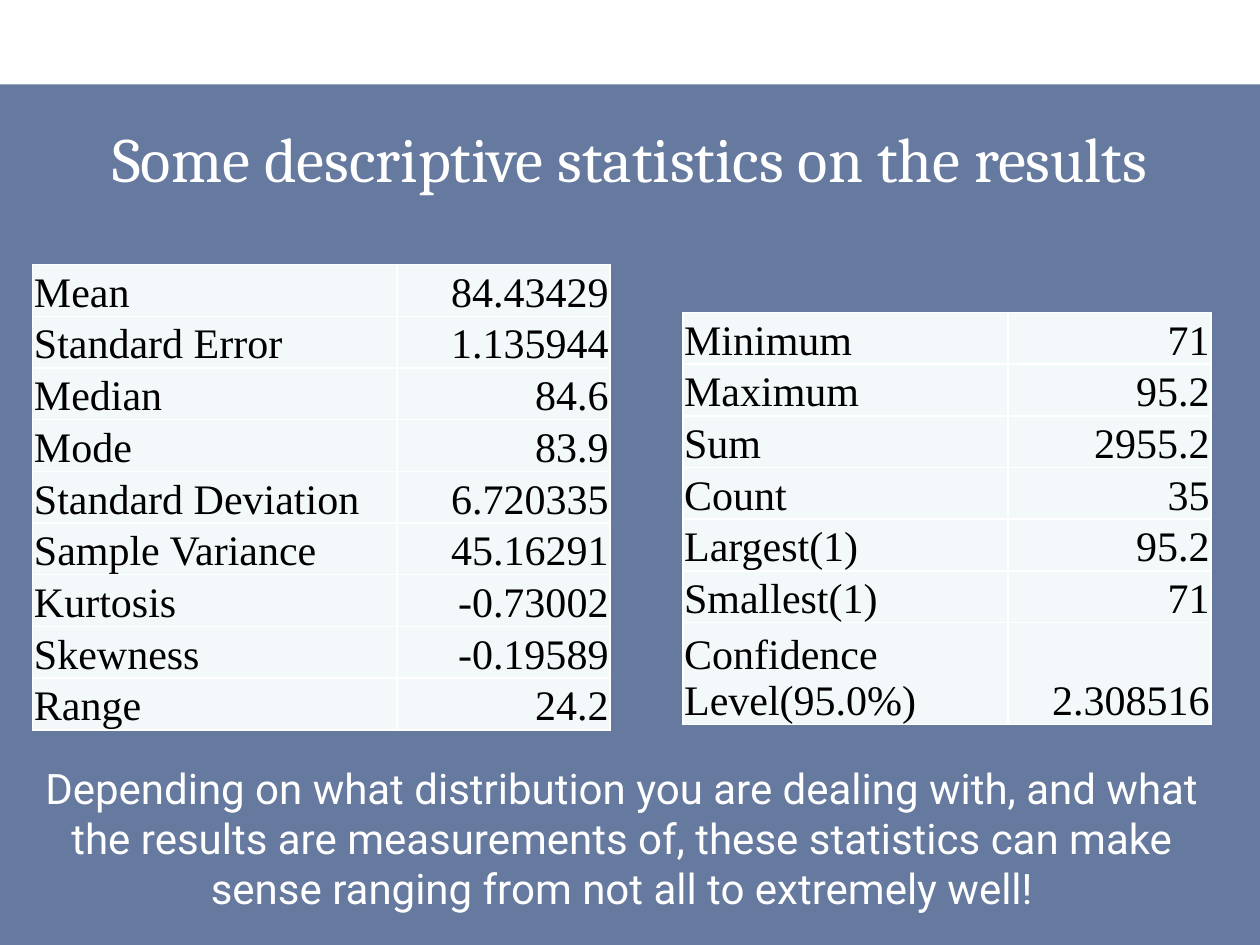
from dataclasses import dataclass

from lxml.etree import SubElement
from pptx import Presentation
from pptx.dml.color import RGBColor as RGB
from pptx.enum.shapes import MSO_SHAPE as SHAPE
from pptx.enum.text import MSO_ANCHOR as ANCHOR, PP_ALIGN as ALIGN
from pptx.oxml.ns import qn
from pptx.util import Inches, Pt

COLORS = {"panel": "002060", "cell": "F3F9FA", "white": "FFFFFF", "black": "000000"}


@dataclass
class StatTable:
    left: float
    top: float
    widths: tuple[float, float]
    rows: list[tuple[str, str]]
    last_height: float


@dataclass
class Caption:
    box: tuple[float, float, float, float]
    text: str
    font: str
    size: int
    anchor: ANCHOR


ROW_HEIGHT = 0.38
TABLES = [
    StatTable(0.26, 2.1, (2.89, 1.69), [
        ("Mean", "84.43429"),
        ("Standard Error", "1.135944"),
        ("Median", "84.6"),
        ("Mode", "83.9"),
        ("Standard Deviation", "6.720335"),
        ("Sample Variance", "45.16291"),
        ("Kurtosis", "-0.73002"),
        ("Skewness", "-0.19589"),
        ("Range", "24.2"),
    ], ROW_HEIGHT),
    StatTable(5.42, 2.48, (2.58, 1.61), [
        ("Minimum", "71"),
        ("Maximum", "95.2"),
        ("Sum", "2955.2"),
        ("Count", "35"),
        ("Largest(1)", "95.2"),
        ("Smallest(1)", "71"),
        ("Confidence Level(95.0%)", "2.308516"),
    ], 0.74),
]
TITLE = Caption((0.25, 0.83, 9.5, 0.83), "Some descriptive statistics on the results",
                "Cambria", 36, ANCHOR.MIDDLE)
REMARK = Caption((0.26, 6, 9.35, 0.56),
                 "Depending on what distribution you are dealing with, and what the results "
                 "are measurements of, these statistics can make sense ranging from not all "
                 "to extremely well!", "Roboto", 24, ANCHOR.TOP)


def color(name: str) -> RGB:
    return RGB.from_string(COLORS[name])


def style_paragraph(p, font: str, size: int, color_name: str, align: ALIGN) -> None:
    p.alignment = align
    for r in p.runs:
        r.font.name = font
        r.font.size = Pt(size)
        r.font.bold = False
        r.font.color.rgb = color(color_name)


def add_panel(slide) -> None:
    """Draw the translucent background below the white top band."""
    sp = slide.shapes.add_shape(SHAPE.RECTANGLE, 0, Inches(0.67), Inches(10), Inches(6.83))
    sp.shadow.inherit = False
    sp.line.fill.background()
    sp.fill.solid()
    sp.fill.fore_color.rgb = color("panel")
    clr = sp.fill._xPr.find(f"{qn('a:solidFill')}/{qn('a:srgbClr')}")
    SubElement(clr, qn("a:alpha"), val="60000")


def add_caption(slide, caption: Caption) -> None:
    tf = slide.shapes.add_textbox(*map(Inches, caption.box)).text_frame
    tf.word_wrap = True
    tf.vertical_anchor = caption.anchor
    tf.text = caption.text
    style_paragraph(tf.paragraphs[0], caption.font, caption.size, "white", ALIGN.CENTER)


def add_borders(cell) -> None:
    tc_pr = cell._tc.get_or_add_tcPr()
    for side in ("lnL", "lnR", "lnT", "lnB"):
        ln = SubElement(tc_pr, qn(f"a:{side}"), w=str(Pt(1)))
        fill = SubElement(ln, qn("a:solidFill"))
        SubElement(fill, qn("a:srgbClr"), val=COLORS["white"])


def fill_cell(cell, text: str, align: ALIGN) -> None:
    add_borders(cell)
    cell.fill.solid()
    cell.fill.fore_color.rgb = color("cell")
    cell.margin_left = cell.margin_right = cell.margin_top = Inches(0.01)
    cell.margin_bottom = 0
    cell.vertical_anchor = ANCHOR.BOTTOM
    cell.text_frame.text = text
    style_paragraph(cell.text_frame.paragraphs[0], "Times New Roman", 24, "black", align)


def add_stat_table(slide, stats: StatTable) -> None:
    heights = [ROW_HEIGHT] * (len(stats.rows) - 1) + [stats.last_height]
    table = slide.shapes.add_table(
        len(stats.rows), 2, Inches(stats.left), Inches(stats.top),
        Inches(sum(stats.widths)), Inches(sum(heights))).table
    table.first_row = table.horz_banding = False
    for column, width in zip(table.columns, stats.widths):
        column.width = Inches(width)
    for row, height, texts in zip(table.rows, heights, stats.rows):
        row.height = Inches(height)
        for cell, text, align in zip(row.cells, texts, (ALIGN.LEFT, ALIGN.RIGHT)):
            fill_cell(cell, text, align)


def main() -> None:
    prs = Presentation()
    prs.slide_width, prs.slide_height = Inches(10), Inches(7.5)
    slide = prs.slides.add_slide(prs.slide_layouts[6])
    add_panel(slide)
    add_caption(slide, TITLE)
    for stats in TABLES:
        add_stat_table(slide, stats)
    add_caption(slide, REMARK)
    prs.save("out.pptx")


if __name__ == "__main__":
    main()
